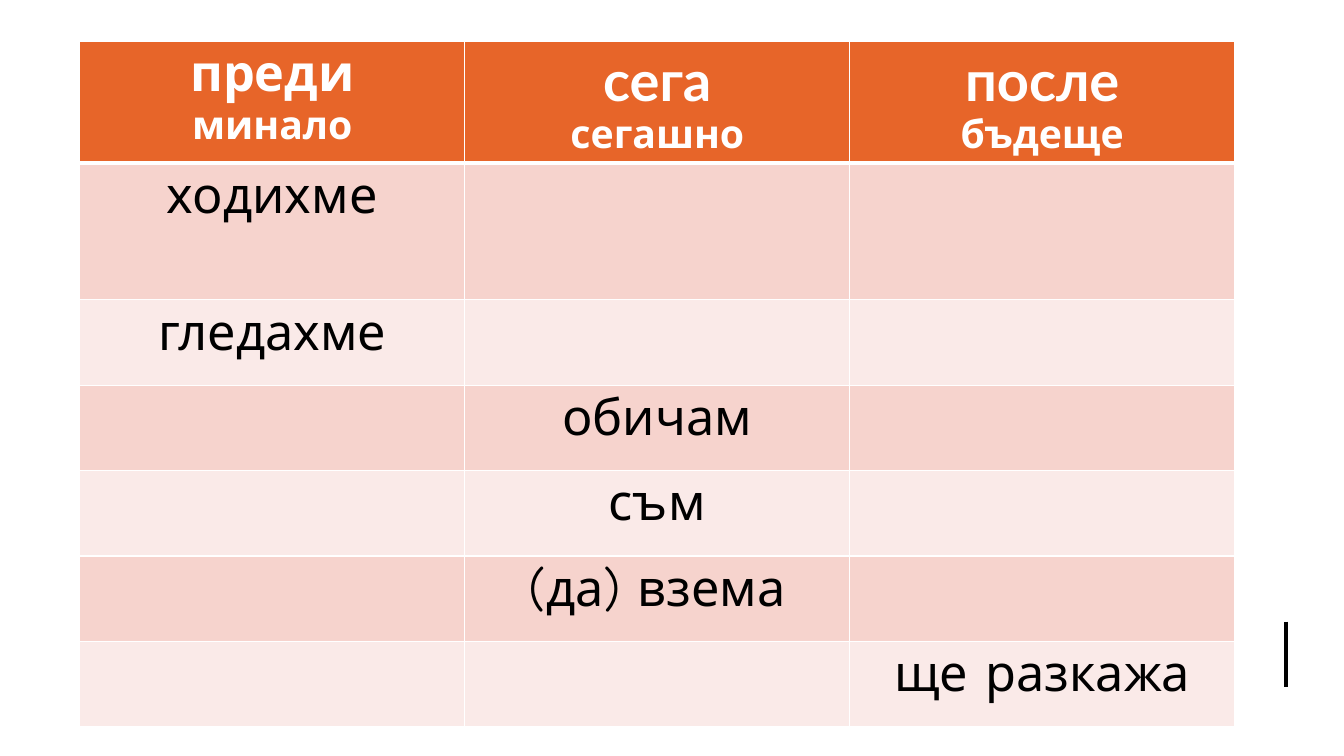
from lxml.etree import SubElement
from pptx import Presentation
from pptx.dml.color import RGBColor
from pptx.enum.shapes import MSO_CONNECTOR
from pptx.enum.text import PP_ALIGN
from pptx.oxml import parse_xml
from pptx.oxml.ns import nsdecls, qn
from pptx.util import Pt

COLORS = {
    "header": "E76529",
    "band_dark": "F6D3CD",
    "band_light": "FAEAE8",
    "white": "FFFFFF",
    "black": "000000",
}
BODY_FONT = "Comic Neue"
TENSES = [
    [("преди", 36, BODY_FONT), ("минало", 28, BODY_FONT)],
    [("сега", 40, "Lato"), ("сегашно", 28, BODY_FONT)],
    [("после", 40, "Lato"), ("бъдеще", 28, BODY_FONT)],
]
VERBS = [
    ("ходихме", 0),
    ("гледахме", 0),
    ("обичам", 1),
    ("съм", 1),
    ("(да) взема", 1),
    ("ще разкажа", 2),
]
ROW_HEIGHTS = [61, 97.5] + [61] * 5


def color(name):
    return RGBColor.from_string(COLORS[name])


def style_cell(cell, fill, bottom_width):
    cell.fill.solid()
    cell.fill.fore_color.rgb = color(fill)
    properties = cell._tc.get_or_add_tcPr()
    widths = {"lnL": 1, "lnR": 1, "lnT": 1, "lnB": bottom_width}
    for position, (side, width) in enumerate(widths.items()):
        border = parse_xml(
            f'<a:{side} {nsdecls("a")} w="{Pt(width)}"><a:solidFill>'
            f'<a:srgbClr val="{COLORS["white"]}"/></a:solidFill></a:{side}>'
        )
        properties.insert(position, border)


def write_lines(cell, lines, ink, bold):
    frame = cell.text_frame
    frame.text = "\n".join(text for text, _, _ in lines)
    for paragraph, (_, size, font_name) in zip(frame.paragraphs, lines):
        paragraph.alignment = PP_ALIGN.CENTER
        paragraph.font.name = font_name
        paragraph.font.size = Pt(size)
        paragraph.font.bold = bold
        paragraph.font.color.rgb = color(ink)


def add_tense_table(slide, left, top, width):
    rows, columns = len(VERBS) + 1, len(TENSES)
    table = slide.shapes.add_table(
        rows, columns, Pt(left), Pt(top), Pt(width), Pt(sum(ROW_HEIGHTS))
    ).table
    for row, height in zip(table.rows, ROW_HEIGHTS):
        row.height = Pt(height)
    for column, lines in enumerate(TENSES):
        table.columns[column].width = Pt(width / columns)
        heading = table.cell(0, column)
        style_cell(heading, "header", 3)
        write_lines(heading, lines, "white", True)
    for row, (verb, tense) in enumerate(VERBS, start=1):
        band = "band_dark" if row % 2 else "band_light"
        for column in range(columns):
            style_cell(table.cell(row, column), band, 1)
        write_lines(table.cell(row, tense), [(verb, 36, BODY_FONT)], "black", False)


def add_margin_rule(slide, left, top, height):
    rule = slide.shapes.add_connector(
        MSO_CONNECTOR.STRAIGHT, Pt(left), Pt(top), Pt(left), Pt(top + height)
    )
    rule.line.color.rgb = color("black")
    rule.line.width = Pt(3)
    SubElement(rule._element.spPr, qn("a:effectLst"))


def main():
    presentation = Presentation()
    presentation.slide_width = Pt(960)
    presentation.slide_height = Pt(540)
    slide = presentation.slides.add_slide(presentation.slide_layouts[6])
    add_margin_rule(slide, 918.75, 444, 47)
    add_tense_table(slide, 57, 29.25, 825)
    presentation.save("out.pptx")


if __name__ == "__main__":
    main()
